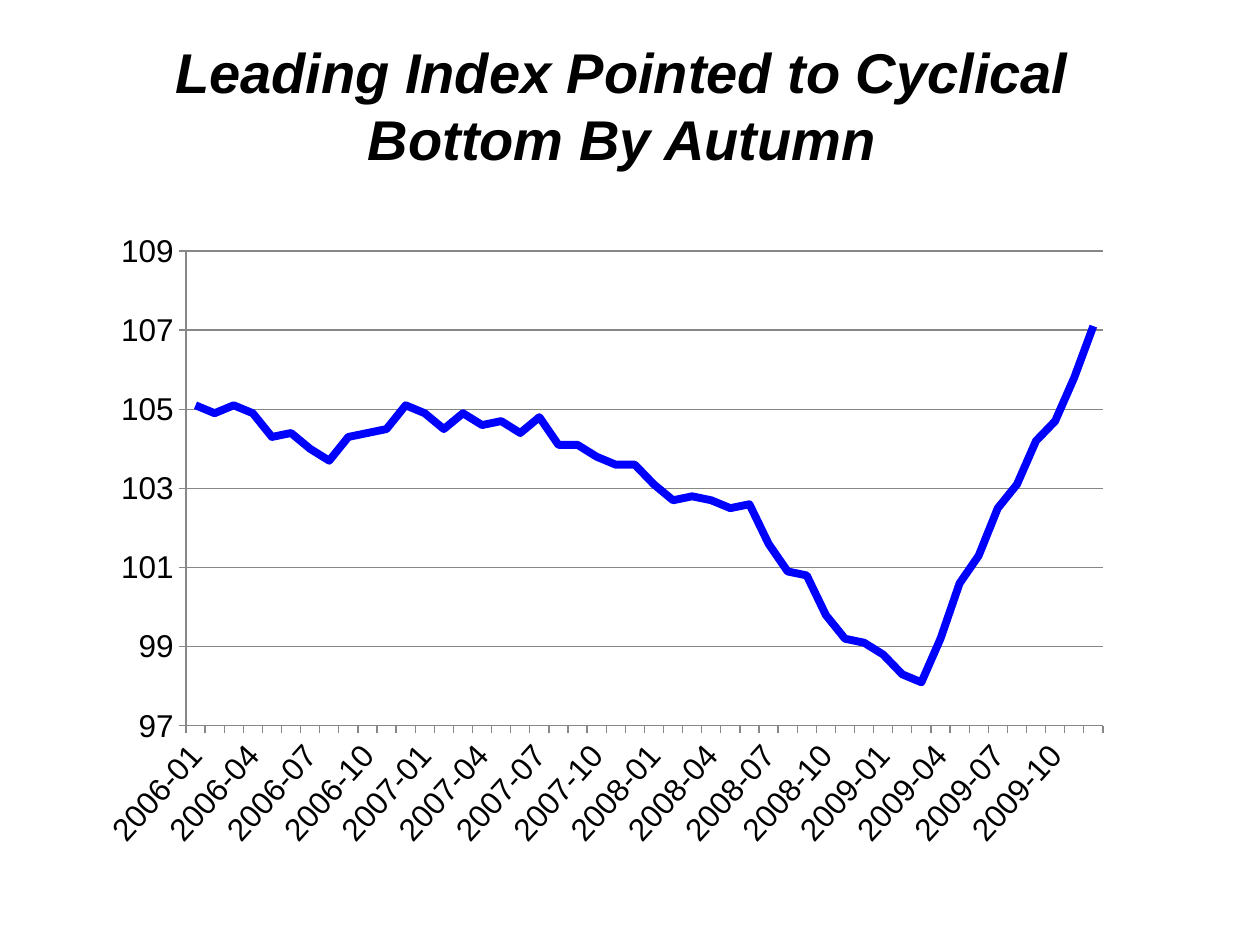
from dataclasses import dataclass
from typing import Any

from lxml import etree
from pptx import Presentation, util as u
from pptx.chart.data import CategoryChartData
from pptx.dml.color import RGBColor
from pptx.enum import chart as charts, text
from pptx.oxml import ns

PX = 914400 // 126
COLORS = {"ink": "000000", "line": "0000FF", "grid": "878787"}
FONT = "Arial"
LABEL_ANGLE = -48
TITLE_LINES = ["Leading Index Pointed to Cyclical ", "Bottom By Autumn "]
MONTHS = [f"{year}-{month:02d}" for year in range(2006, 2010) for month in range(1, 13)]
INDEX_VALUES = [
    105.1, 104.9, 105.1, 104.9, 104.3, 104.4, 104, 103.7, 104.3, 104.4, 104.5, 105.1,
    104.9, 104.5, 104.9, 104.6, 104.7, 104.4, 104.8, 104.1, 104.1, 103.8, 103.6, 103.6,
    103.1, 102.7, 102.8, 102.7, 102.5, 102.6, 101.6, 100.9, 100.8, 99.8, 99.2, 99.1,
    98.8, 98.3, 98.1, 99.2, 100.6, 101.3, 102.5, 103.1, 104.2, 104.7, 105.8, 107.1,
]


@dataclass(frozen=True)
class Box:
    left: int
    top: int
    width: int
    height: int

    def emu(self) -> list[int]:
        return [side * PX for side in (self.left, self.top, self.width, self.height)]


TITLE_BOX = Box(0, 31, 1260, 149)
CHART_BOX = Box(84, 220, 1040, 640)
PLOT_BOX = Box(186, 251, 917, 475)


def set_values(target: Any, values: dict[str, Any]) -> None:
    for name, value in values.items():
        setattr(target, name, value)


def color(name: str) -> RGBColor:
    return RGBColor.from_string(COLORS[name])


def style_font(font: Any, size: int, **flags: bool) -> None:
    set_values(font, {"name": FONT, "size": u.Pt(size), **flags})
    font.color.rgb = color("ink")


def style_line(line: Any, name: str, width: float) -> None:
    line.color.rgb = color(name)
    line.width = u.Pt(width)


def draw_title(page: Any) -> None:
    title = page.shapes.title
    set_values(title, dict(zip(("left", "top", "width", "height"), TITLE_BOX.emu())))
    frame = title.text_frame
    set_values(frame, {
        "word_wrap": True,
        "auto_size": text.MSO_AUTO_SIZE.SHAPE_TO_FIT_TEXT,
        "vertical_anchor": text.MSO_ANCHOR.TOP,
    })
    for number, words in enumerate(TITLE_LINES):
        para = frame.add_paragraph() if number else frame.paragraphs[0]
        set_values(para, {"alignment": text.PP_ALIGN.CENTER, "space_before": u.Pt(0)})
        span = para.add_run()
        span.text = words
        style_font(span.font, 32, bold=True, italic=True)


def place_plot(chart: Any) -> None:
    plot_area = chart.plots[0]._element.getparent()
    for old in plot_area.findall(ns.qn("c:layout")):
        plot_area.remove(old)
    layout = etree.Element(ns.qn("c:layout"))
    plot_area.insert(0, layout)
    manual = etree.SubElement(layout, ns.qn("c:manualLayout"))
    fractions = {
        "x": (PLOT_BOX.left - CHART_BOX.left) / CHART_BOX.width,
        "y": (PLOT_BOX.top - CHART_BOX.top) / CHART_BOX.height,
        "w": PLOT_BOX.width / CHART_BOX.width,
        "h": PLOT_BOX.height / CHART_BOX.height,
    }
    settings = {"layoutTarget": "inner", "xMode": "edge", "yMode": "edge", **fractions}
    for tag, value in settings.items():
        etree.SubElement(manual, ns.qn(f"c:{tag}")).set("val", str(value))


def style_axes(chart: Any) -> None:
    for axis in (chart.category_axis, chart.value_axis):
        axis.major_tick_mark = charts.XL_TICK_MARK.OUTSIDE
        axis.minor_tick_mark = charts.XL_TICK_MARK.NONE
        style_line(axis.format.line, "grid", 0.75)
        style_font(axis.tick_labels.font, 18)
    set_values(chart.value_axis, {
        "minimum_scale": 97,
        "maximum_scale": 109,
        "major_unit": 2,
        "has_major_gridlines": True,
    })
    style_line(chart.value_axis.major_gridlines.format.line, "grid", 0.75)
    months = chart.category_axis._element
    body = months.find(f"{ns.qn('c:txPr')}/{ns.qn('a:bodyPr')}")
    body.set("rot", str(LABEL_ANGLE * 60000))
    body.set("vert", "horz")
    multi_level = months.find(ns.qn("c:noMultiLvlLbl"))
    for tag, step in (("tickLblSkip", 3), ("tickMarkSkip", 1)):
        skip = etree.Element(ns.qn(f"c:{tag}"))
        skip.set("val", str(step))
        multi_level.addprevious(skip)


def draw_chart(page: Any) -> None:
    data = CategoryChartData(number_format="General")
    data.categories = MONTHS
    data.add_series("Series 1", INDEX_VALUES)
    frame = page.shapes.add_chart(charts.XL_CHART_TYPE.LINE, *CHART_BOX.emu(), data)
    chart = frame.chart
    set_values(chart, {"has_legend": False, "has_title": False})
    style_font(chart.font, 18)
    plot = chart.plots[0]
    plot.vary_by_categories = False
    series = plot.series[0]
    series.smooth = False
    series.marker.style = charts.XL_MARKER_STYLE.NONE
    style_line(series.format.line, "line", 4.5)
    style_axes(chart)
    place_plot(chart)


def main() -> None:
    deck = Presentation()
    set_values(deck, {"slide_width": u.Inches(10), "slide_height": u.Inches(7.5)})
    page = deck.slides.add_slide(deck.slide_layouts[5])
    draw_chart(page)
    draw_title(page)
    deck.save("out.pptx")


if __name__ == "__main__":
    main()
